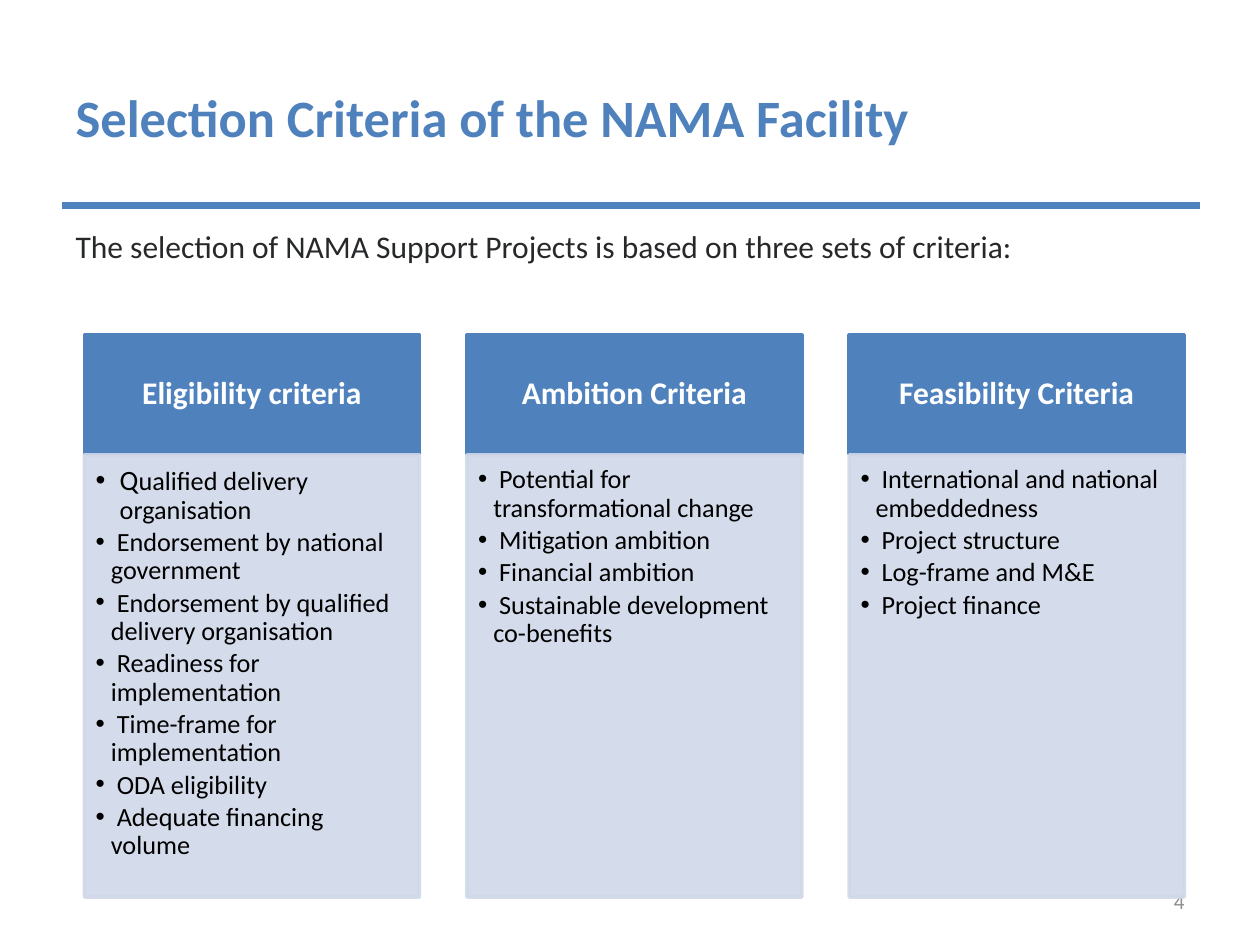
"""Build the slide on the selection criteria of the NAMA Facility."""
import lxml.etree
import pptx
import pptx.dml.color
import pptx.enum.shapes
import pptx.enum.text
import pptx.oxml.ns
import pptx.util

Inches = pptx.util.Inches
Pt = pptx.util.Pt
RGBColor = pptx.dml.color.RGBColor
Align = pptx.enum.text.PP_ALIGN
Anchor = pptx.enum.text.MSO_ANCHOR
qn = pptx.oxml.ns.qn

BLUE = RGBColor(0x4F, 0x81, 0xBD)
PALE_BLUE = RGBColor(0xD0, 0xD8, 0xE8)
DARK = RGBColor(0x26, 0x28, 0x2A)
GREY = RGBColor(0x8C, 0x8C, 0x8C)
BLACK = RGBColor(0, 0, 0)
WHITE = RGBColor(0xFF, 0xFF, 0xFF)

COLUMN_LEFT, COLUMN_WIDTH = 0.67, 2.66
COLUMN_PITCH = (6.74 - COLUMN_LEFT) / 2
HEADER_TOP, HEADER_HEIGHT = 2.66, 0.94
LIST_TOP, LIST_HEIGHT = 3.61, 3.51

COLUMNS = {
    "Eligibility criteria": [
        "Qualified delivery organisation",
        " Endorsement by national government",
        " Endorsement by qualified delivery organisation",
        " Readiness for implementation",
        " Time-frame for implementation",
        " ODA eligibility",
        " Adequate financing volume",
    ],
    "Ambition Criteria": [
        " Potential for transformational change",
        " Mitigation ambition",
        " Financial ambition",
        " Sustainable development co-benefits",
    ],
    "Feasibility Criteria": [
        " International and national embeddedness",
        " Project structure",
        " Log-frame and M&E",
        " Project finance",
    ],
}


def assign(target, values):
    for name, value in values.items():
        setattr(target, name, value)


class CriteriaSlide:
    font_name = "Calibri"
    header_frame = {
        "vertical_anchor": Anchor.MIDDLE, "word_wrap": True,
        "margin_left": Inches(0.14), "margin_right": Inches(0.14),
        "margin_top": Inches(0.08), "margin_bottom": Inches(0.08),
    }
    list_frame = {
        "vertical_anchor": Anchor.TOP, "word_wrap": True,
        "margin_left": Inches(0.09), "margin_right": Inches(0.12),
        "margin_top": Inches(0.09), "margin_bottom": Inches(0.13),
    }
    header_paragraph = {"alignment": Align.CENTER, "line_spacing": 0.9, "space_after": Pt(6.3)}
    list_paragraph = {"alignment": Align.LEFT, "line_spacing": 0.9,
                      "space_before": Pt(0), "space_after": Pt(2.25)}

    def __init__(self, presentation):
        self.slide = presentation.slides.add_slide(presentation.slide_layouts[1])

    def place(self, shape, left, top, width, height):
        bounds = {"left": left, "top": top, "width": width, "height": height}
        assign(shape, {name: Inches(value) for name, value in bounds.items()})

    def add_text(self, paragraph, text, size, color, bold=False, layout=None):
        assign(paragraph, layout or {})
        run = paragraph.add_run()
        run.text = text
        assign(run.font, {"name": self.font_name, "size": Pt(size), "bold": bold})
        run.font.color.rgb = color

    def indent(self, paragraph, hanging, bullet=None):
        properties = paragraph._p.get_or_add_pPr()
        properties.set("marL", str(Inches(hanging)))
        properties.set("indent", str(-Inches(hanging)))
        if bullet:
            font = lxml.etree.SubElement(properties, qn("a:buFont"))
            font.set("typeface", "Arial")
            lxml.etree.SubElement(properties, qn("a:buChar")).set("char", bullet)
        else:
            lxml.etree.SubElement(properties, qn("a:buNone"))

    def title(self, text):
        shape = self.slide.shapes.title
        self.place(shape, 0.5, 0.3, 9, 1.25)
        shape.text_frame.vertical_anchor = Anchor.MIDDLE
        self.add_text(shape.text_frame.paragraphs[0], text, 30, BLUE, True,
                      {"alignment": Align.LEFT})

    def introduction(self, text):
        shape = self.slide.placeholders[1]
        self.place(shape, 0.5, 1.75, 9, 4.95)
        paragraph = shape.text_frame.paragraphs[0]
        self.add_text(paragraph, text, 18, DARK, layout={"space_before": Pt(3.6)})
        self.indent(paragraph, 0)

    def page_number(self, text):
        shape = self.slide.shapes.add_textbox(
            Inches(7.17), Inches(6.95), Inches(2.33), Inches(0.4))
        assign(shape.text_frame, {"word_wrap": True, "vertical_anchor": Anchor.MIDDLE})
        self.add_text(shape.text_frame.paragraphs[0], text, 12, GREY,
                      layout={"alignment": Align.RIGHT})

    def rectangle(self, bounds, fill, line, opacity=100):
        shape = self.slide.shapes.add_shape(
            pptx.enum.shapes.MSO_SHAPE.RECTANGLE, *map(Inches, bounds))
        shape.shadow.inherit = False
        shape.fill.solid()
        shape.fill.fore_color.rgb = fill
        shape.line.color.rgb = line
        shape.line.width = Pt(2)
        if opacity < 100:
            for color in shape._element.spPr.iter(qn("a:srgbClr")):
                lxml.etree.SubElement(color, qn("a:alpha")).set("val", str(opacity * 1000))
        return shape

    def header(self, left, text):
        shape = self.rectangle((left, HEADER_TOP, COLUMN_WIDTH, HEADER_HEIGHT), BLUE, BLUE)
        assign(shape.text_frame, self.header_frame)
        self.add_text(shape.text_frame.paragraphs[0], text, 18, WHITE, True,
                      self.header_paragraph)

    def bullet_list(self, left, items):
        shape = self.rectangle((left, LIST_TOP, COLUMN_WIDTH, LIST_HEIGHT),
                               PALE_BLUE, PALE_BLUE, 90)
        frame = shape.text_frame
        assign(frame, self.list_frame)
        for index, item in enumerate(items):
            paragraph = frame.add_paragraph() if index else frame.paragraphs[0]
            spaced = item.startswith(" ")
            if not spaced:
                self.add_text(paragraph, item[0], 16, BLACK)
            self.add_text(paragraph, item if spaced else item[1:], 15, BLACK,
                          layout=self.list_paragraph)
            self.indent(paragraph, 0.12 if spaced else 0.19, "•")


def main():
    presentation = pptx.Presentation()
    assign(presentation, {"slide_width": Inches(10), "slide_height": Inches(7.5)})
    page = CriteriaSlide(presentation)
    page.rectangle((0.48, 1.59, 9.06, 0.08), BLUE, WHITE)
    page.title("Selection Criteria of the NAMA Facility")
    page.introduction(
        "The selection of NAMA Support Projects is based on three sets of criteria:")
    page.page_number("4")
    for index, (heading, items) in enumerate(COLUMNS.items()):
        left = COLUMN_LEFT + index * COLUMN_PITCH
        page.header(left, heading)
        page.bullet_list(left, items)
    presentation.save("out.pptx")


if __name__ == "__main__":
    main()
